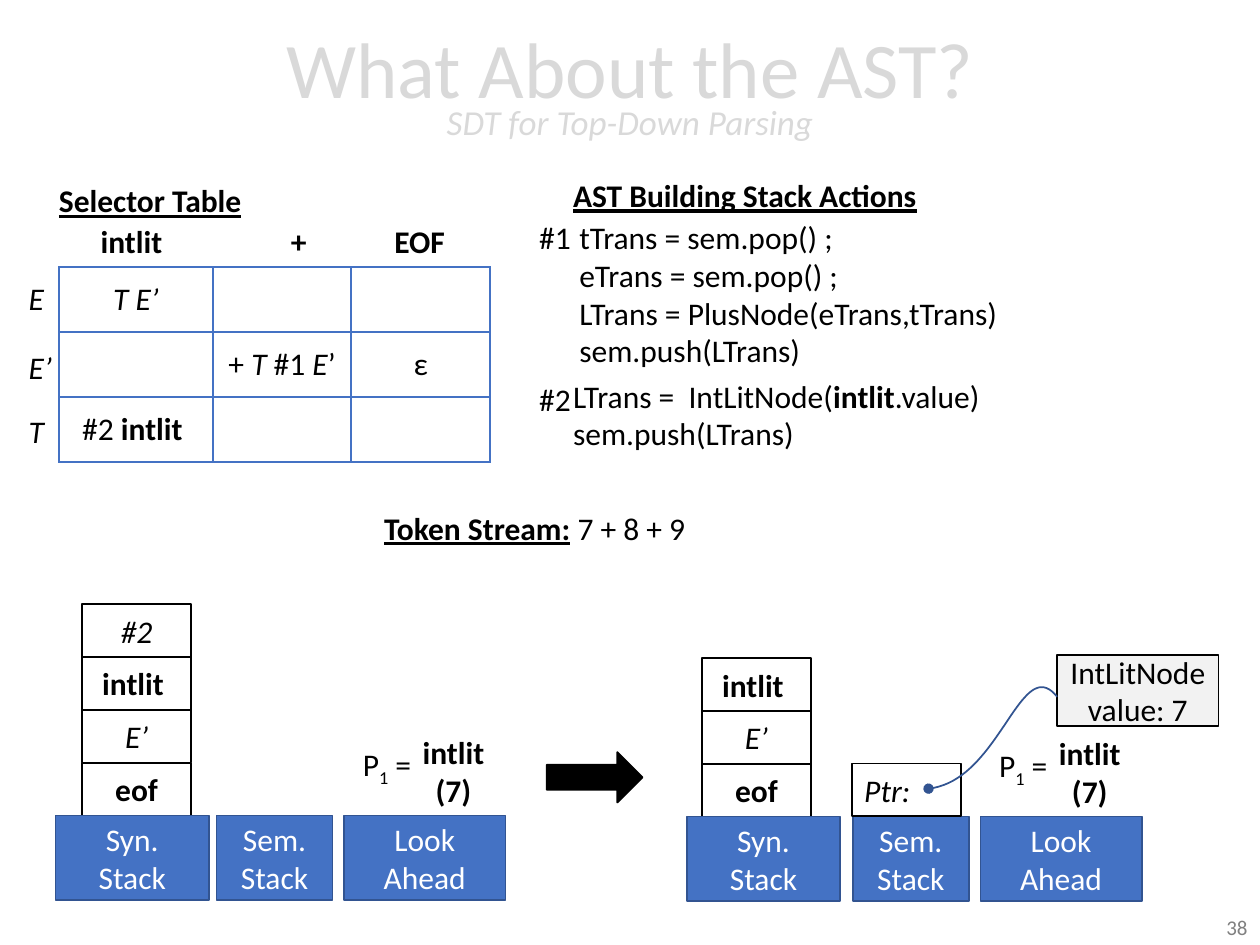
from lxml.etree import SubElement
from pptx import Presentation
from pptx.dml.color import RGBColor
from pptx.enum.shapes import MSO_SHAPE as Shape
from pptx.enum.text import MSO_ANCHOR as Anchor, MSO_AUTO_SIZE as Fit, PP_ALIGN as Align
from pptx.oxml.ns import qn
from pptx.util import Pt

FONT = "Calibri"
BLACK, WHITE, GREY = "000000", "FFFFFF", "D9D9D9"
BLUE, NAVY = "4472C4", "325491"


def color(code):
    return RGBColor.from_string(code)


def add_run(para, text, style="", size=18, ink=BLACK):
    """Style letters: b bold, i italic, u underline, s subscript."""
    run = para.add_run()
    run.text = text
    font = run.font
    font.name, font.size = FONT, Pt(size)
    font.color.rgb = color(ink)
    font.bold, font.italic = "b" in style, "i" in style
    font.underline = "u" in style
    if "s" in style:
        font._element.set("baseline", "-25000")


def write(frame, lines, align=Align.LEFT, size=18, ink=BLACK):
    """Each line is a list of (text, style) runs."""
    for num, line in enumerate(lines):
        para = frame.add_paragraph() if num else frame.paragraphs[0]
        para.alignment = align
        for text, style in line:
            add_run(para, text, style, size, ink)


def label(slide, x, y, w, h, lines, **look):
    box = slide.shapes.add_textbox(Pt(x), Pt(y), Pt(w), Pt(h))
    box.text_frame.word_wrap = False
    write(box.text_frame, lines, **look)


def block(slide, x, y, w, h, lines=(), fill=WHITE, line=BLACK,
          ink=BLACK, align=Align.CENTER, kind=Shape.RECTANGLE):
    box = slide.shapes.add_shape(kind, Pt(x), Pt(y), Pt(w), Pt(h))
    box.shadow.inherit = False
    box.fill.solid()
    box.fill.fore_color.rgb = color(fill)
    box.line.color.rgb = color(line)
    box.line.width = Pt(1)
    box.text_frame.vertical_anchor = Anchor.MIDDLE
    write(box.text_frame, lines, align, ink=ink)


def heading(slide, x, y, w, h):
    title = slide.shapes.title
    title.left, title.top, title.width, title.height = Pt(x), Pt(y), Pt(w), Pt(h)
    frame = title.text_frame
    frame.auto_size, frame.vertical_anchor = Fit.NONE, Anchor.MIDDLE
    para = frame.paragraphs[0]
    para.alignment, para.line_spacing = Align.CENTER, 0.7
    add_run(para, "What About the AST?", size=45, ink=GREY)
    para.add_line_break()
    add_run(para, "SDT for Top-Down Parsing", "i", 20, GREY)


def border(cell):
    props = cell._tc.get_or_add_tcPr()
    for num, side in enumerate(("lnL", "lnR", "lnT", "lnB")):
        line = props.makeelement(qn(f"a:{side}"), {"w": str(Pt(1.25))})
        fill = SubElement(line, qn("a:solidFill"))
        SubElement(fill, qn("a:srgbClr"), val=BLUE)
        props.insert(num, line)


def selector(slide, x, y):
    """Selector table with its heading and row and column labels."""
    widths, step = (87.8, 79.2, 79.2), 37.1
    cells = [
        [[("T E’", "i")], [], []],
        [[], [("+ ", ""), ("T", "i"), (" #1 ", ""), ("E", "i"), ("’", "")], [("ε", "")]],
        [[("#2 ", ""), ("intlit ", "b")], [], []],
    ]
    label(slide, x - 7.2, y - 52.5, 119.5, 28.8, [[("Selector Table", "bu")]])
    for dx, w, text in ((16.6, 49.7, "intlit"), (125.3, 23.8, "+"), (184.4, 43.9, "EOF")):
        label(slide, x + dx, y - 29.5, w, 28.8, [[(text, "b")]])
    for dy, w, text in ((3.6, 23, "E"), (42.5, 28.1, "E’"), (79.2, 23, "T")):
        label(slide, x - 24.5, y + dy, w, 28.8, [[(text, "i")]])

    grid = slide.shapes.add_table(3, 3, Pt(x), Pt(y), Pt(sum(widths)), Pt(3 * step)).table
    grid.first_row = grid.horz_banding = False
    for col, w in zip(grid.columns, widths):
        col.width = Pt(w)
    for row, texts in zip(grid.rows, cells):
        row.height = Pt(step)
        for cell, runs in zip(row.cells, texts):
            cell.fill.solid()
            cell.fill.fore_color.rgb = color(WHITE)
            cell.vertical_anchor = Anchor.MIDDLE
            write(cell.text_frame, [runs], Align.CENTER)
            border(cell)


def actions(slide, x, y):
    """Numbered stack actions."""
    label(slide, x + 19.4, y, 212.4, 28.8, [[("AST Building Stack Actions", "bu")]])
    for dy, text in ((23.8, "#1"), (116.6, "#2")):
        label(slide, x, y + dy, 33.1, 28.8, [[(text, "")]])
    steps = ("tTrans = sem.pop() ;", "eTrans = sem.pop() ;",
             "LTrans = PlusNode(eTrans,tTrans)", "sem.push(LTrans)")
    label(slide, x + 23, y + 23.8, 256.3, 94.3, [[(text, "")] for text in steps])
    label(slide, x + 19.4, y + 114.5, 254.2, 51.1, [
        [("LTrans =  IntLitNode(", ""), ("intlit", "b"), (".value)", "")],
        [("sem.push(LTrans)", "")]])


def machine(slide, x, y, items, inset, sem):
    """Parser state: bases at y, with the syntax stack and lookahead above."""
    high, ahead = 30.2, sem + 72.8
    for num, item in enumerate(items):
        block(slide, x + inset, y - high * (num + 1), 62.6, high, [[item]])
    for dx, w, words in ((0, 87.8, ("Syn.", "Stack")), (sem, 66.2, ("Sem.", "Stack")),
                         (ahead, 92.2, ("Look", "Ahead"))):
        block(slide, x + dx, y, w, 48.2, [[(word, "")] for word in words],
              BLUE, NAVY, WHITE)
    label(slide, x + ahead + 3.6, y - 44, 43.9, 28.8, [[("P", ""), ("1", "s"), (" =", "")]])
    label(slide, x + ahead + 35.2, y - 50.6, 54.7, 51.1,
          [[("intlit", "b")], [("(7)", "b")]], align=Align.CENTER)


def pointer(slide, x, y):
    """Semantic entry with a curve to its tree node."""
    block(slide, x + 117.4, y, 92.2, 40.3,
          [[("IntLitNode", "")], [("value: 7", "")]], "F2F2F2")
    block(slide, x, y + 61.9, 62.6, high := 30.2, [[("Ptr:", "i")]], align=Align.LEFT)
    knots = ((43.9, 61.9 + high / 2 - 0.7), (84.9, 72), (96.5, -2.2), (117.4, 23.8))
    count, spots = 40, []
    for num in range(count + 1):
        t = num / count
        parts = ((1 - t) ** 3, 3 * t * (1 - t) ** 2, 3 * t * t * (1 - t), t ** 3)
        spots.append((Pt(x + sum(k * knot[0] for k, knot in zip(parts, knots))),
                      Pt(y + sum(k * knot[1] for k, knot in zip(parts, knots)))))
    pen = slide.shapes.build_freeform(*spots[0])
    pen.add_line_segments(spots[1:], close=False)
    curve = pen.convert_to_shape()
    curve.shadow.inherit = False
    curve.fill.background()
    curve.line.color.rgb = color(NAVY)
    curve.line.width = Pt(1)
    SubElement(curve.line._get_or_add_ln(), qn("a:headEnd"), type="oval")


def main():
    deck = Presentation()
    deck.slide_width, deck.slide_height = Pt(720), Pt(540)
    slide = deck.slides.add_slide(deck.slide_layouts[5])

    # Title, table and actions
    heading(slide, 0, 1.4, 720, 104.4)
    selector(slide, 33.8, 152.6)
    actions(slide, 301, 97.2)
    label(slide, 212.4, 287.3, 188.6, 28.8,
          [[("Token Stream:", "bu"), (" 7 + 8 + 9", "")]])

    # Parser before and after the step
    rest = [("eof", "b"), ("E’", "i"), ("intlit ", "b")]
    machine(slide, 31.7, 466, rest + [("#2", "i")], 15.1, 92.1)
    block(slide, 312.5, 429.8, 54.7, 28.8, fill=BLACK, kind=Shape.RIGHT_ARROW)
    machine(slide, 392.4, 466.6, rest, 8.6, 95)
    pointer(slide, 486.7, 374.4)

    # Page number
    label(slide, 558, 519.1, 162, 20.2, [[("38", "")]],
          align=Align.RIGHT, size=12, ink="808080")
    deck.save("out.pptx")


if __name__ == "__main__":
    main()
